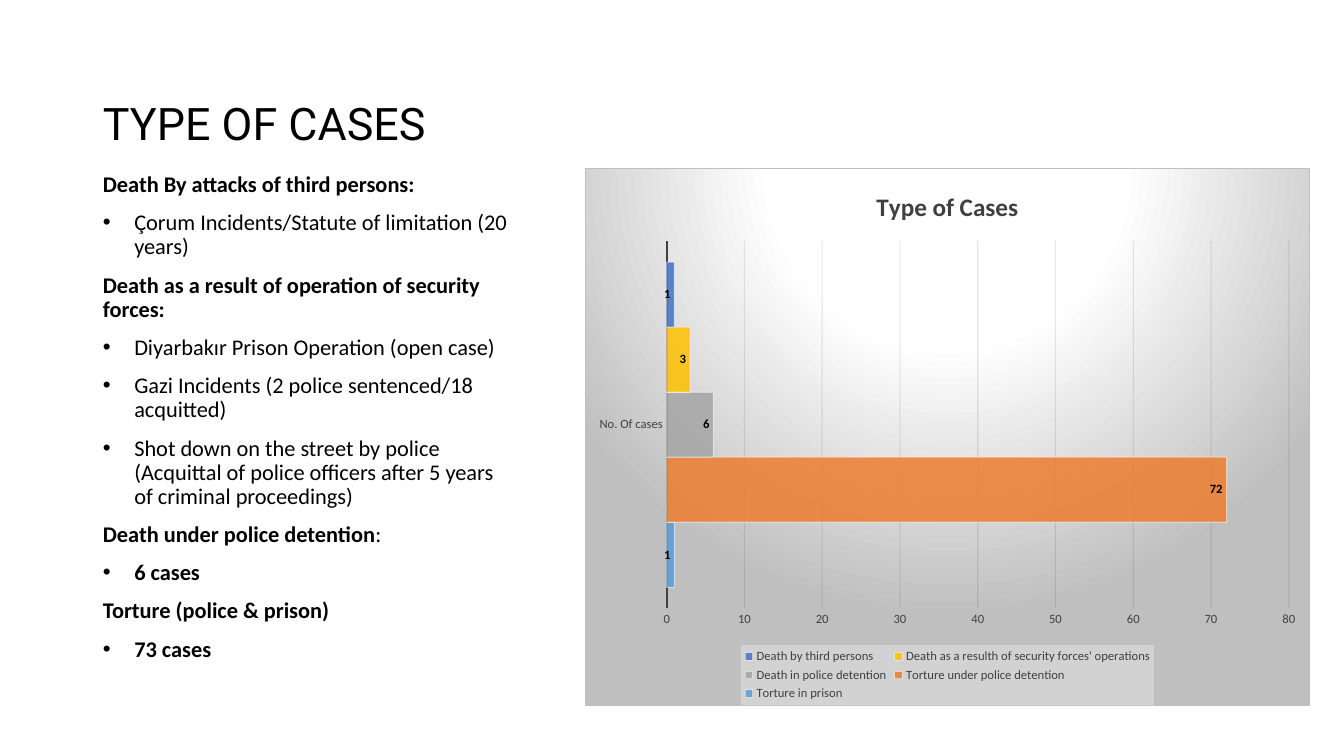
from lxml import etree
from pptx import Presentation
from pptx.chart.data import CategoryChartData
from pptx.dml.color import RGBColor
from pptx.enum.chart import XL_CHART_TYPE, XL_LABEL_POSITION, XL_LEGEND_POSITION, XL_TICK_MARK
from pptx.enum.text import MSO_ANCHOR, MSO_AUTO_SIZE, PP_ALIGN
from pptx.oxml import parse_xml
from pptx.oxml.ns import qn
from pptx.util import Cm, Pt

BAR_CLUSTERED = XL_CHART_TYPE.BAR_CLUSTERED
INSIDE_END = XL_LABEL_POSITION.INSIDE_END
LEGEND_BOTTOM = XL_LEGEND_POSITION.BOTTOM
NO_TICKS = XL_TICK_MARK.NONE
BOTTOM, TOP = MSO_ANCHOR.BOTTOM, MSO_ANCHOR.TOP
NO_FIT = MSO_AUTO_SIZE.NONE
LEFT = PP_ALIGN.LEFT

BLACK, WHITE, DARK, SILVER = "000000", "FFFFFF", "404040", "BFBFBF"
NAMESPACES = (
    'xmlns:c="http://schemas.openxmlformats.org/drawingml/2006/chart" '
    'xmlns:a="http://schemas.openxmlformats.org/drawingml/2006/main"'
)

CASE_GROUPS = [
    ("Death By attacks of third persons:", False,
     ["Çorum Incidents/Statute of limitation (20 years)"]),
    ("Death as a result of operation of security forces:", False,
     ["Diyarbakır Prison Operation (open case)",
      "Gazi Incidents (2 police sentenced/18 acquitted)",
      "Shot down on the street by police (Acquittal of police officers "
      "after 5 years of criminal proceedings)"]),
    ("Death under police detention", True, ["6 cases"]),
    ("Torture (police & prison)", True, ["73 cases"]),
]

CASE_COUNTS = [
    ("Torture in prison ", 1, "5B9BD5"),
    ("Torture under police detention ", 72, "ED7D31"),
    ("Death in police detention", 6, "A5A5A5"),
    ("Death as a resulth of security forces' operations", 3, "FFC000"),
    ("Death by third persons ", 1, "4472C4"),
]


def rgb(value):
    return RGBColor.from_string(value)


def style_font(font, name, size, color, bold=False):
    font.name = name
    font.size = Pt(size)
    font.bold = bold
    font.color.rgb = rgb(color)


def place(placeholder, box, anchor):
    placeholder.left, placeholder.top, placeholder.width, placeholder.height = box
    frame = placeholder.text_frame
    frame.word_wrap = True
    frame.auto_size = NO_FIT
    frame.vertical_anchor = anchor
    return frame


def set_alpha(properties, percent):
    for color in properties.iter(qn("a:srgbClr")):
        etree.SubElement(color, qn("a:alpha")).set("val", str(percent * 1000))


def set_bullet(paragraph, bulleted):
    properties = paragraph._p.get_or_add_pPr()
    indent = Cm(0.79) if bulleted else 0
    properties.set("marL", str(indent))
    properties.set("indent", str(-indent))
    if bulleted:
        etree.SubElement(properties, qn("a:buFont")).set("typeface", "Arial")
        etree.SubElement(properties, qn("a:buChar")).set("char", "•")
    else:
        etree.SubElement(properties, qn("a:buNone"))


def add_title(slide, box):
    frame = place(slide.shapes.title, box, BOTTOM)
    frame.text = "TYPE OF CASES"
    heading = frame.paragraphs[0]
    heading.alignment = LEFT
    heading.line_spacing = 0.9
    style_font(heading.runs[0].font, "Roboto", 32, BLACK)


def add_case_list(slide, box):
    frame = place(slide.placeholders[1], box, TOP)
    lines = []
    for heading, bold_items, items in CASE_GROUPS:
        lines.append((heading, True, False))
        lines += [(item, bold_items, True) for item in items]
    frame.text = "\n".join(text for text, _, _ in lines)
    for paragraph, (text, bold, bulleted) in zip(frame.paragraphs, lines):
        paragraph.line_spacing = 0.9
        paragraph.space_before = Pt(10)
        set_bullet(paragraph, bulleted)
        style_font(paragraph.runs[0].font, "Calibri", 16, BLACK, bold)
        if text == "Death under police detention":
            colon = paragraph.add_run()
            colon.text = ":"
            style_font(colon.font, "Calibri", 16, BLACK)


def style_axes(chart):
    categories, values = chart.category_axis, chart.value_axis
    for axis in (categories, values):
        axis.major_tick_mark = axis.minor_tick_mark = NO_TICKS
        style_font(axis.tick_labels.font, "Calibri", 9, DARK)
    categories.format.line.color.rgb = rgb(DARK)
    categories.format.line.width = Pt(1.5)
    values.format.line.fill.background()
    values.minimum_scale, values.maximum_scale, values.major_unit = 0, 80, 10
    grid = values.major_gridlines.format.line
    grid.color.rgb = rgb("0D0D0D")
    grid.width = Pt(0.75)
    set_alpha(values.major_gridlines._xAx.find(qn("c:majorGridlines")), 10)


def style_bars(chart):
    plot = chart.plots[0]
    plot.gap_width = 65
    plot.vary_by_categories = False
    for series, (_, _, color) in zip(plot.series, CASE_COUNTS):
        series.format.fill.solid()
        series.format.fill.fore_color.rgb = rgb(color)
        properties = series._element.find(qn("c:spPr"))
        set_alpha(properties, 85)
        outline = series.format.line
        outline.color.rgb = rgb(WHITE)
        outline.width = Pt(0.75)
        set_alpha(properties.find(qn("a:ln")), 50)
        labels = series.data_labels
        labels.show_value = True
        labels.position = INSIDE_END
        style_font(labels.font, "Calibri", 9, BLACK, True)


def style_legend(chart):
    chart.has_legend = True
    legend = chart.legend
    legend.position = LEGEND_BOTTOM
    legend.include_in_layout = False
    style_font(legend.font, "Calibri", 9, DARK)
    panel = parse_xml(
        f'<c:spPr {NAMESPACES}><a:solidFill><a:srgbClr val="F2F2F2"/>'
        '</a:solidFill></c:spPr>'
    )
    set_alpha(panel, 39)
    legend._element.find(qn("c:txPr")).addprevious(panel)


def style_background(chart):
    stops = "".join(
        f'<a:gs pos="{position * 1000}"><a:srgbClr val="{color}"/></a:gs>'
        for position, color in [(0, WHITE), (39, WHITE), (100, SILVER)]
    )
    background = parse_xml(
        f'<c:spPr {NAMESPACES}><a:gradFill><a:gsLst>{stops}</a:gsLst>'
        '<a:path path="circle"><a:fillToRect l="50000" t="-80000" r="50000" '
        'b="180000"/></a:path></a:gradFill>'
        f'<a:ln w="{Pt(0.75)}"><a:solidFill><a:srgbClr val="{SILVER}"/>'
        '</a:solidFill></a:ln></c:spPr>'
    )
    chart.element.find(qn("c:txPr")).addprevious(background)


def add_case_chart(slide, box):
    data = CategoryChartData()
    data.categories = ["No. Of cases"]
    for name, count, _ in CASE_COUNTS:
        data.add_series(name, [count])
    chart = slide.shapes.add_chart(BAR_CLUSTERED, *box, data).chart
    style_font(chart.font, "Calibri", 10, BLACK)
    chart.has_title = True
    caption = chart.chart_title.text_frame
    caption.text = "Type of Cases"
    style_font(caption.paragraphs[0].runs[0].font, "Calibri", 18, DARK, True)
    style_axes(chart)
    style_bars(chart)
    style_legend(chart)
    style_background(chart)


def main():
    deck = Presentation()
    deck.slide_width, deck.slide_height = Cm(33.87), Cm(19.05)
    slide = deck.slides.add_slide(deck.slide_layouts[1])
    add_title(slide, (Cm(2.34), Cm(1.27), Cm(30.68), Cm(2.64)))
    add_case_list(slide, (Cm(2.34), Cm(4.24), Cm(10.92), Cm(13.54)))
    add_case_chart(slide, (Cm(14.73), Cm(4.24), Cm(18.29), Cm(13.54)))
    deck.save("out.pptx")


if __name__ == "__main__":
    main()
